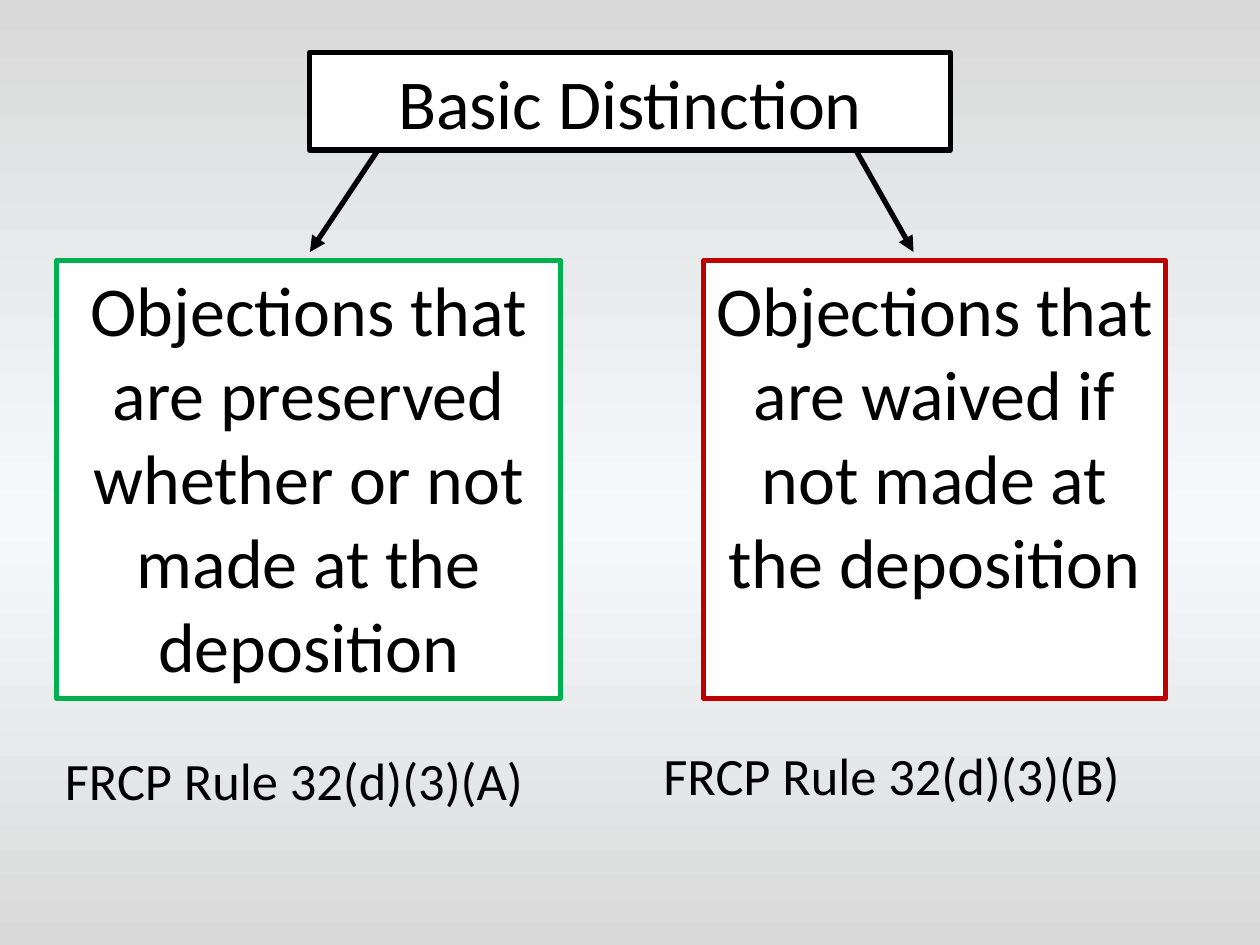
from copy import deepcopy
from dataclasses import dataclass

from pptx import Presentation
from pptx.dml.color import RGBColor
from pptx.enum.shapes import MSO_CONNECTOR
from pptx.enum.text import MSO_ANCHOR, MSO_AUTO_SIZE, PP_ALIGN
from pptx.oxml.ns import qn
from pptx.util import Pt
from lxml.etree import SubElement


@dataclass(frozen=True)
class Theme:
    font: str = "Calibri"
    heading_size: int = 40
    rule_size: int = 30
    line_width: int = 3
    ink: RGBColor = RGBColor(0, 0, 0)
    paper: RGBColor = RGBColor(0xFF, 0xFF, 0xFF)
    preserved: RGBColor = RGBColor(0x00, 0xB0, 0x50)
    waived: RGBColor = RGBColor(0xC0, 0x00, 0x00)
    backdrop: tuple = (
        (0, RGBColor(0xD9, 0xD9, 0xD9)),
        (0.55, RGBColor(0xF7, 0xFA, 0xFD)),
        (1, RGBColor(0xD9, 0xD9, 0xD9)),
    )


THEME = Theme()


def paint_backdrop(slide):
    fill = slide.background.fill
    fill.gradient()
    fill.gradient_angle = 270  # counter-clockwise, so top to bottom
    stop_list = slide.element.find(".//" + qn("a:gsLst"))
    stop_list.append(deepcopy(stop_list[0]))
    for stop, (position, color) in zip(fill.gradient_stops, THEME.backdrop):
        stop.position = position
        stop.color.rgb = color


def write(holder, text, size, align, anchor=MSO_ANCHOR.TOP):
    frame = holder.text_frame
    frame.word_wrap = True
    frame.auto_size = MSO_AUTO_SIZE.NONE
    frame.vertical_anchor = anchor
    paragraph = frame.paragraphs[0]
    paragraph.text = text
    paragraph.alignment = align
    paragraph.font.name = THEME.font
    paragraph.font.size = Pt(size)
    paragraph.font.color.rgb = THEME.ink


def frame_in(holder, color):
    """Give a text holder a white fill and a coloured border."""
    holder.fill.solid()
    holder.fill.fore_color.rgb = THEME.paper
    holder.line.color.rgb = color
    holder.line.width = Pt(THEME.line_width)


def add_heading(slide, left, top, width, height):
    heading = slide.shapes.title
    heading.left, heading.top = Pt(left), Pt(top)
    heading.width, heading.height = Pt(width), Pt(height)
    frame_in(heading, THEME.ink)
    write(heading, "Basic Distinction", THEME.heading_size,
          PP_ALIGN.CENTER, MSO_ANCHOR.MIDDLE)


def add_arrow(slide, start, end):
    arrow = slide.shapes.add_connector(
        MSO_CONNECTOR.STRAIGHT, *(Pt(value) for value in (*start, *end)))
    arrow.line.color.rgb = THEME.ink
    arrow.line.width = Pt(THEME.line_width)
    SubElement(arrow.line._get_or_add_ln(), qn("a:tailEnd"), type="triangle")
    SubElement(arrow.element.spPr, qn("a:effectLst"))


def add_branch(slide, left, top, width, height, color, objections,
               rule, rule_offset, arrow_from, arrow_to):
    """Add a framed kind of objection, the arrow to it and its rule below.

    The rule offset is from the frame's lower left corner, the arrow ends
    from its upper left corner.
    """
    kind = slide.shapes.add_textbox(Pt(left), Pt(top), Pt(width), Pt(height))
    frame_in(kind, color)
    write(kind, objections, THEME.heading_size, PP_ALIGN.CENTER)

    add_arrow(slide, *((left + x, top + y) for x, y in (arrow_from, arrow_to)))

    across, down = rule_offset
    citation = slide.shapes.add_textbox(
        Pt(left + across), Pt(top + height + down), Pt(312), Pt(44))
    write(citation, rule, THEME.rule_size, PP_ALIGN.LEFT)


def main():
    deck = Presentation()
    deck.slide_width, deck.slide_height = Pt(720), Pt(540)
    slide = deck.slides.add_slide(deck.slide_layouts.get_by_name("Title Only"))

    paint_backdrop(slide)
    add_heading(slide, 177, 30, 366, 55.7)
    add_branch(slide, 32.4, 149, 288, 250, THEME.preserved,
               "Objections that are preserved whether or not made at the deposition",
               "FRCP Rule 32(d)(3)(A)", (-2.4, 25),
               (183.6, -63.3), (144.7, -5))
    add_branch(slide, 402, 149, 264, 250, THEME.waived,
               "Objections that are waived if not made at the deposition",
               "FRCP Rule 32(d)(3)(B)", (-30, 22.3),
               (87, -63.3), (120, -5))
    deck.save("out.pptx")


if __name__ == "__main__":
    main()
